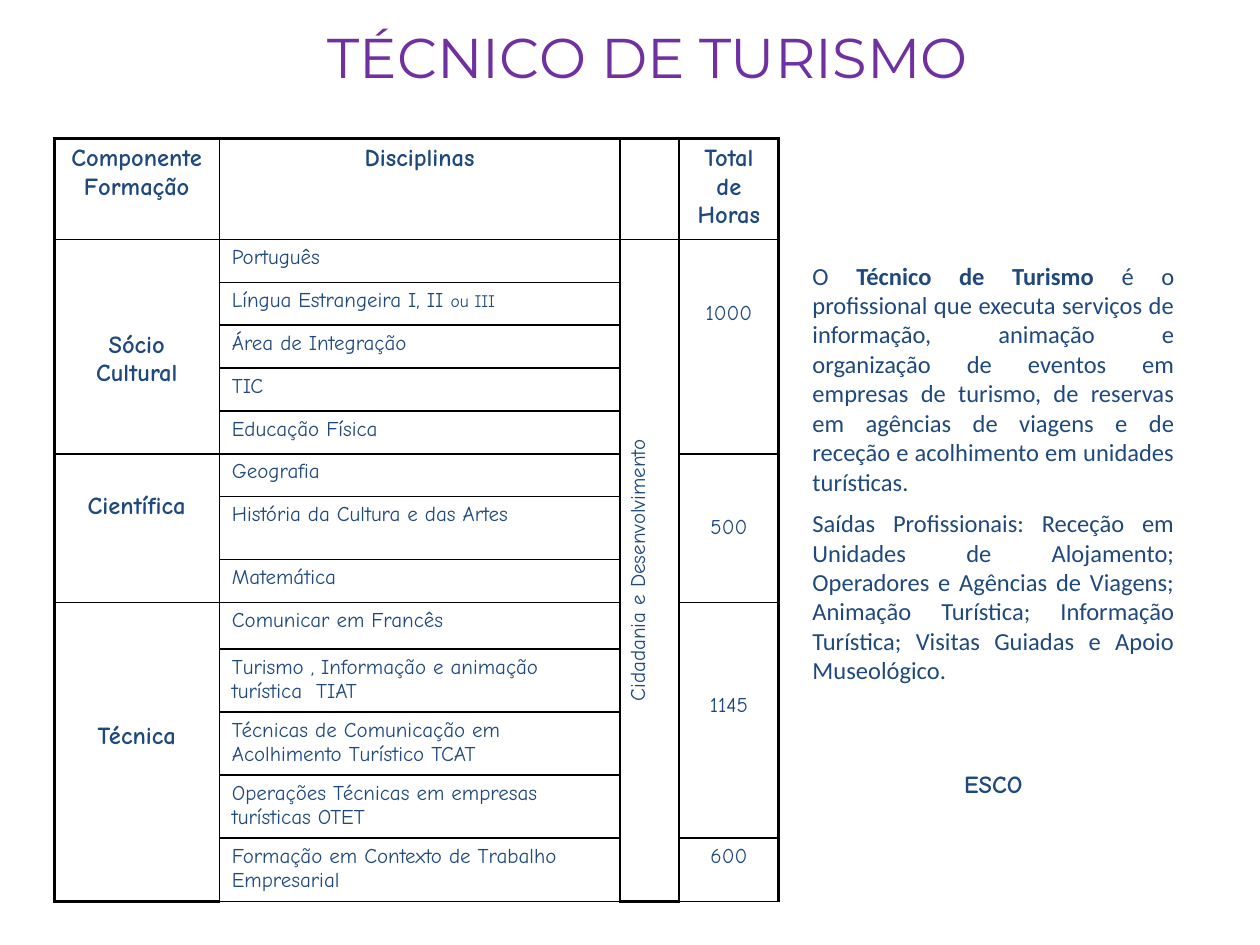
from dataclasses import dataclass

from lxml import etree
from pptx import Presentation
from pptx.dml.color import RGBColor
from pptx.enum.text import MSO_AUTO_SIZE, PP_ALIGN
from pptx.oxml.ns import qn
from pptx.util import Pt

CENTER, LEFT, JUSTIFY = PP_ALIGN.CENTER, PP_ALIGN.LEFT, PP_ALIGN.JUSTIFY
GROW_SHAPE = MSO_AUTO_SIZE.SHAPE_TO_FIT_TEXT

NAVY, PURPLE, BLACK = "1F497D", "7030A0", "000000"
TITLE_FONT, TABLE_FONT, BODY_FONT = "Montserrat", "Comic Neue", "Calibri"
THIN, THICK = 1, 2.25

COLUMN_WIDTHS = [94.3, 229, 33.8, 56.9]
ROW_HEIGHTS = [41] + [24.5] * 6 + [36, 24.5, 26.6, 28] + [36] * 3
LAST_ROW, LAST_COLUMN = len(ROW_HEIGHTS) - 1, len(COLUMN_WIDTHS) - 1
THICK_BOTTOM_COLUMNS = (0, 2)


@dataclass
class Block:
    """A table cell, merged downwards over `span` rows."""
    row: int
    column: int
    text: str
    span: int = 1
    size: float = 12
    bold: bool = False
    align: PP_ALIGN = CENTER
    top_margin: float = 3.6
    vertical: bool = False


HEADERS = ["Componente Formação", "Disciplinas", "", "Total de Horas"]
SUBJECTS = [
    "Português",
    "Língua Estrangeira I, II ",
    "Área de Integração",
    "TIC",
    "Educação Física",
    "Geografia",
    "História da Cultura e das Artes",
    "Matemática",
    "Comunicar em Francês",
    "Turismo , Informação e animação turística  TIAT",
    "Técnicas de Comunicação em Acolhimento Turístico TCAT",
    "Operações Técnicas em empresas turísticas OTET",
    "Formação em Contexto de Trabalho Empresarial",
]
LANGUAGE_ROW = 2
BLOCKS = [
    *(Block(0, column, text, size=14, bold=True) for column, text in enumerate(HEADERS)),
    *(Block(row, 1, text, align=LEFT) for row, text in enumerate(SUBJECTS, 1)),
    Block(1, 0, "Sócio Cultural", 5, 14, True, top_margin=52.6),
    Block(6, 0, "Científica", 3, 14, True, top_margin=22.3),
    Block(9, 0, "Técnica", 5, 14, True, top_margin=68.6),
    Block(1, 2, "Cidadania e Desenvolvimento", 13, vertical=True),
    Block(1, 3, "1000", 5, top_margin=35.5),
    Block(6, 3, "500", 3, top_margin=35.5),
    Block(9, 3, "1145", 4, top_margin=52),
    Block(13, 3, "600"),
]


def color(hex_value: str) -> RGBColor:
    return RGBColor.from_string(hex_value)


def write(paragraph, text: str, *, font: str = BODY_FONT, size: float = 14,
          fill: str = NAVY, bold: bool = False, align: PP_ALIGN = JUSTIFY,
          space_before: float = 0) -> None:
    """Add a run to the paragraph and format both."""
    paragraph.alignment = align
    paragraph.space_before = Pt(space_before)
    run = paragraph.add_run()
    run.text = text
    run.font.name = font
    run.font.size = Pt(size)
    run.font.bold = bold
    run.font.color.rgb = color(fill)


def add_box(slide, left: float, top: float, width: float, height: float):
    box = slide.shapes.add_textbox(Pt(left), Pt(top), Pt(width), Pt(height))
    return box.text_frame


def set_borders(cell, block: Block) -> None:
    """Thick lines on the outer frame, thin ones inside."""
    at_bottom = block.row + block.span - 1 == LAST_ROW
    thick_sides = {
        "L": block.column == 0,
        "R": block.column == LAST_COLUMN,
        "T": block.row == 0,
        "B": at_bottom and block.column in THICK_BOTTOM_COLUMNS,
    }
    properties = cell._tc.get_or_add_tcPr()
    for side, thick in thick_sides.items():
        line = etree.SubElement(properties, qn(f"a:ln{side}"),
                                w=str(Pt(THICK if thick else THIN)))
        fill = etree.SubElement(line, qn("a:solidFill"))
        etree.SubElement(fill, qn("a:srgbClr"), val=BLACK)


def draw_block(table, block: Block) -> None:
    cell = table.cell(block.row, block.column)
    if block.span > 1:
        cell.merge(table.cell(block.row + block.span - 1, block.column))
    set_borders(cell, block)
    cell.fill.background()
    cell.margin_top = Pt(block.top_margin)
    if block.vertical:
        cell._tc.get_or_add_tcPr().set("vert", "vert270")
    if block.text:
        write(cell.text_frame.paragraphs[0], block.text, font=TABLE_FONT,
              size=block.size, bold=block.bold, align=block.align)


def draw_table(slide) -> None:
    frame = slide.shapes.add_table(
        len(ROW_HEIGHTS), len(COLUMN_WIDTHS), Pt(31), Pt(79.2),
        Pt(sum(COLUMN_WIDTHS)), Pt(sum(ROW_HEIGHTS)))
    table = frame.table
    table.first_row = table.horz_banding = False
    for column, width in zip(table.columns, COLUMN_WIDTHS):
        column.width = Pt(width)
    for row, height in zip(table.rows, ROW_HEIGHTS):
        row.height = Pt(height)
    for block in BLOCKS:
        draw_block(table, block)
    language = table.cell(LANGUAGE_ROW, 1).text_frame.paragraphs[0]
    write(language, "ou III", font=TABLE_FONT, size=10, align=LEFT)


def draw_title(slide) -> None:
    frame = add_box(slide, 45.5, 9.4, 649.4, 68.4)
    frame.word_wrap = False
    write(frame.paragraphs[0], "TÉCNICO DE TURISMO", font=TITLE_FONT,
          size=32, fill=PURPLE, align=CENTER)


def draw_description(slide) -> None:
    frame = add_box(slide, 457.2, 145.4, 221, 434.9)
    frame.word_wrap = True
    frame.auto_size = GROW_SHAPE
    profile = frame.paragraphs[0]
    write(profile, "O ")
    write(profile, "Técnico de Turismo ", bold=True)
    write(profile, "é o profissional que executa serviços de informação, animação e "
                   "organização de eventos em empresas de turismo, de reservas em "
                   "agências de viagens e de receção e acolhimento em unidades turísticas.")
    write(frame.add_paragraph(),
          "Saídas Profissionais: Receção em Unidades de Alojamento; Operadores e "
          "Agências de Viagens; Animação Turística; Informação Turística; Visitas "
          "Guiadas e Apoio Museológico.", space_before=7)
    write(frame.add_paragraph(), "ESCO", font=TABLE_FONT, bold=True,
          align=CENTER, space_before=48)


def main() -> None:
    presentation = Presentation()
    presentation.slide_width, presentation.slide_height = Pt(720), Pt(540)
    slide = presentation.slides.add_slide(presentation.slide_layouts[6])
    draw_title(slide)
    draw_table(slide)
    draw_description(slide)
    presentation.save("out.pptx")


if __name__ == "__main__":
    main()
